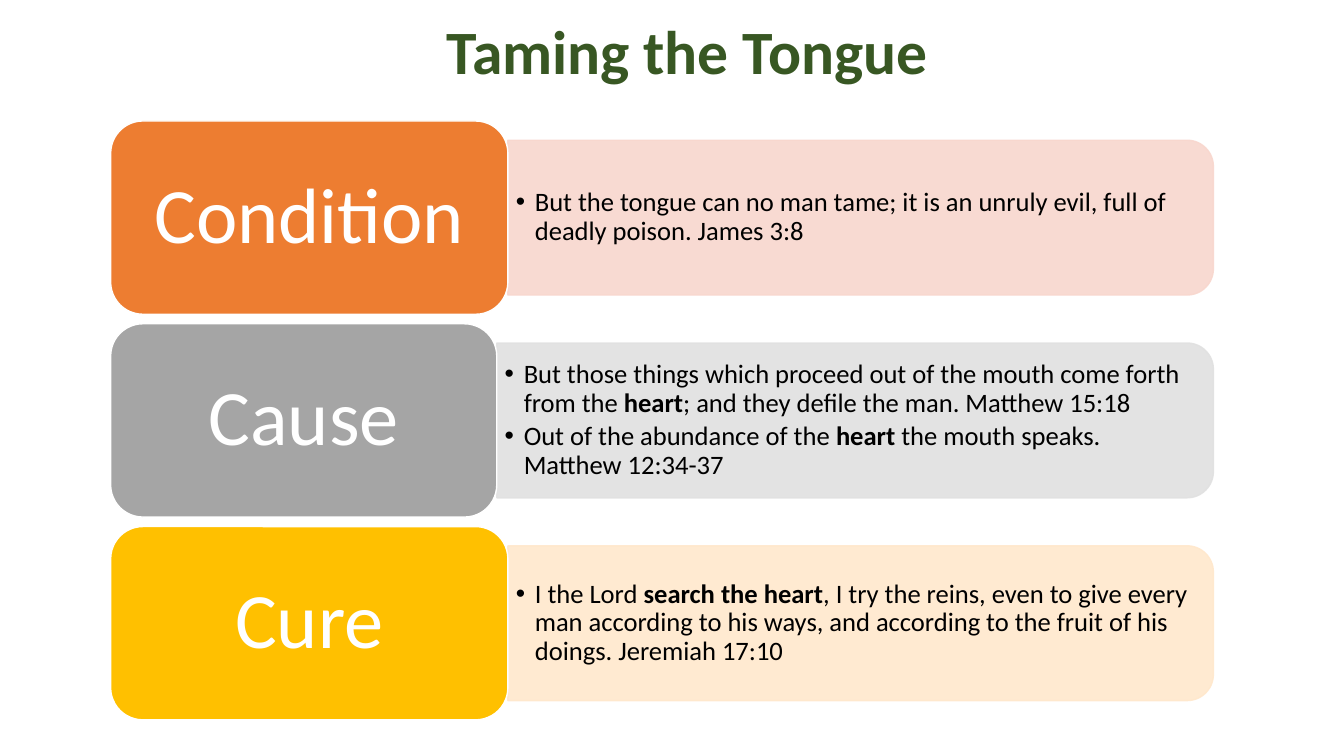
"""Build the Taming the Tongue slide: three labels, each with a panel of verses."""
from math import cos, pi, sin

from lxml import etree
from pptx import Presentation
from pptx.dml.color import RGBColor
from pptx.enum.shapes import MSO_SHAPE
from pptx.enum.text import MSO_ANCHOR, PP_ALIGN
from pptx.oxml.ns import qn
from pptx.util import Cm, Pt

ROUND = MSO_SHAPE.ROUNDED_RECTANGLE
MIDDLE = MSO_ANCHOR.MIDDLE
LEFT, CENTER = PP_ALIGN.LEFT, PP_ALIGN.CENTER

GREEN = RGBColor(0x38, 0x57, 0x23)
BLACK = RGBColor(0, 0, 0)
WHITE = RGBColor(0xFF, 0xFF, 0xFF)
ORANGE = RGBColor(0xED, 0x7D, 0x31)
GRAY = RGBColor(0xA5, 0xA5, 0xA5)
GOLD = RGBColor(0xFF, 0xC0, 0x00)
PEACH = RGBColor(0xF8, 0xD7, 0xCE)
SILVER = RGBColor(0xE1, 0xE1, 0xE1)
CREAM = RGBColor(0xFF, 0xE8, 0xCC)

TITLE = "Taming the Tongue"
ROWS = [
    ("Condition", 10.01, ORANGE, PEACH, [
        "But the tongue can no man tame; it is an unruly evil, full of deadly poison. James 3:8",
    ]),
    ("Cause", 9.73, GRAY, SILVER, [
        "But those things which proceed out of the mouth come forth from the **heart**; "
        "and they defile the man. Matthew 15:18",
        "Out of the abundance of the **heart** the mouth speaks. Matthew 12:34-37",
    ]),
    ("Cure", 10.01, GOLD, CREAM, [
        "I the Lord **search the heart**, I try the reins, even to give every man according "
        "to his ways, and according to the fruit of his doings. Jeremiah 17:10",
    ]),
]

START, TOP, PITCH, TALL = 2.79, 3.05, 5.11, 4.87
END, DEPTH, CURVE = 30.58, 3.9, 0.66
STEPS = 16


def write(shape, lines, size, color, bold=False, align=CENTER, pad=None, after=0, bullet=None):
    """Fill a shape with paragraphs; double stars mark bold words."""
    frame = shape.text_frame
    frame.word_wrap = True
    frame.vertical_anchor = MIDDLE
    if pad:
        frame.margin_left, frame.margin_top, frame.margin_right, frame.margin_bottom = map(Cm, pad)
    for i, line in enumerate(lines):
        para = frame.add_paragraph() if i else frame.paragraphs[0]
        if bullet:
            props = para._p.get_or_add_pPr()
            props.set("marL", str(Cm(0.48)))
            props.set("indent", str(-Cm(0.48)))
            etree.SubElement(props, qn("a:buFont"), typeface="Arial")
            etree.SubElement(props, qn("a:buChar"), char=bullet)
        para.alignment = align
        para.line_spacing = 0.9
        para.space_after = Pt(after)
        for j, part in enumerate(line.split("**")):
            run = para.add_run()
            run.text = part
            run.font.name = "Calibri"
            run.font.size = Pt(size)
            run.font.bold = bold or j % 2 == 1
            run.font.color.rgb = color


def paint(shape, fill, line, alpha=None):
    """Set fill and line, with an optional opacity in percent."""
    shape.shadow.inherit = False
    shape.fill.solid()
    shape.fill.fore_color.rgb = fill
    shape.line.color.rgb = line
    shape.line.width = Pt(1)
    if alpha:
        for tone in shape._element.spPr.iter(qn("a:srgbClr")):
            etree.SubElement(tone, qn("a:alpha"), val=str(alpha * 1000))


def arc(x, y, first):
    """Give the points of a quarter turn around a centre."""
    turns = [first + pi / 2 * i / STEPS for i in range(STEPS + 1)]
    return [(Cm(x + CURVE * cos(t)), Cm(y + CURVE * sin(t))) for t in turns]


def panel(shapes, left, top):
    """Draw a box that is round on its right side only."""
    low = top + DEPTH
    path = shapes.build_freeform(Cm(left), Cm(top), scale=1.0)
    path.add_line_segments(
        arc(END - CURVE, top + CURVE, -pi / 2)
        + arc(END - CURVE, low - CURVE, 0)
        + [(Cm(left), Cm(low))], close=True)
    return path.convert_to_shape()


def main():
    """Lay out the slide and save it."""
    deck = Presentation()
    deck.slide_width, deck.slide_height = Cm(33.87), Cm(19.05)
    shapes = deck.slides.add_slide(deck.slide_layouts[6]).shapes

    title = shapes.add_textbox(Cm(5.89), Cm(0), Cm(22.86), Cm(2.74))
    write(title, [TITLE], 44, GREEN, bold=True)

    for i, (name, wide, dark, pale, verses) in enumerate(ROWS):
        top = TOP + i * PITCH
        box = panel(shapes, START + wide, top + (TALL - DEPTH) / 2)
        paint(box, pale, pale, alpha=90)
        write(box, verses, 19, BLACK, align=LEFT, pad=(0.2, 0.28, 0.38, 0.28), after=3, bullet="•")
        label = shapes.add_shape(ROUND, Cm(START), Cm(top), Cm(wide), Cm(TALL))
        paint(label, dark, WHITE)
        write(label, [name], 56, WHITE, pad=(0.84, 0.53, 0.84, 0.53))

    deck.save("out.pptx")


if __name__ == "__main__":
    main()
